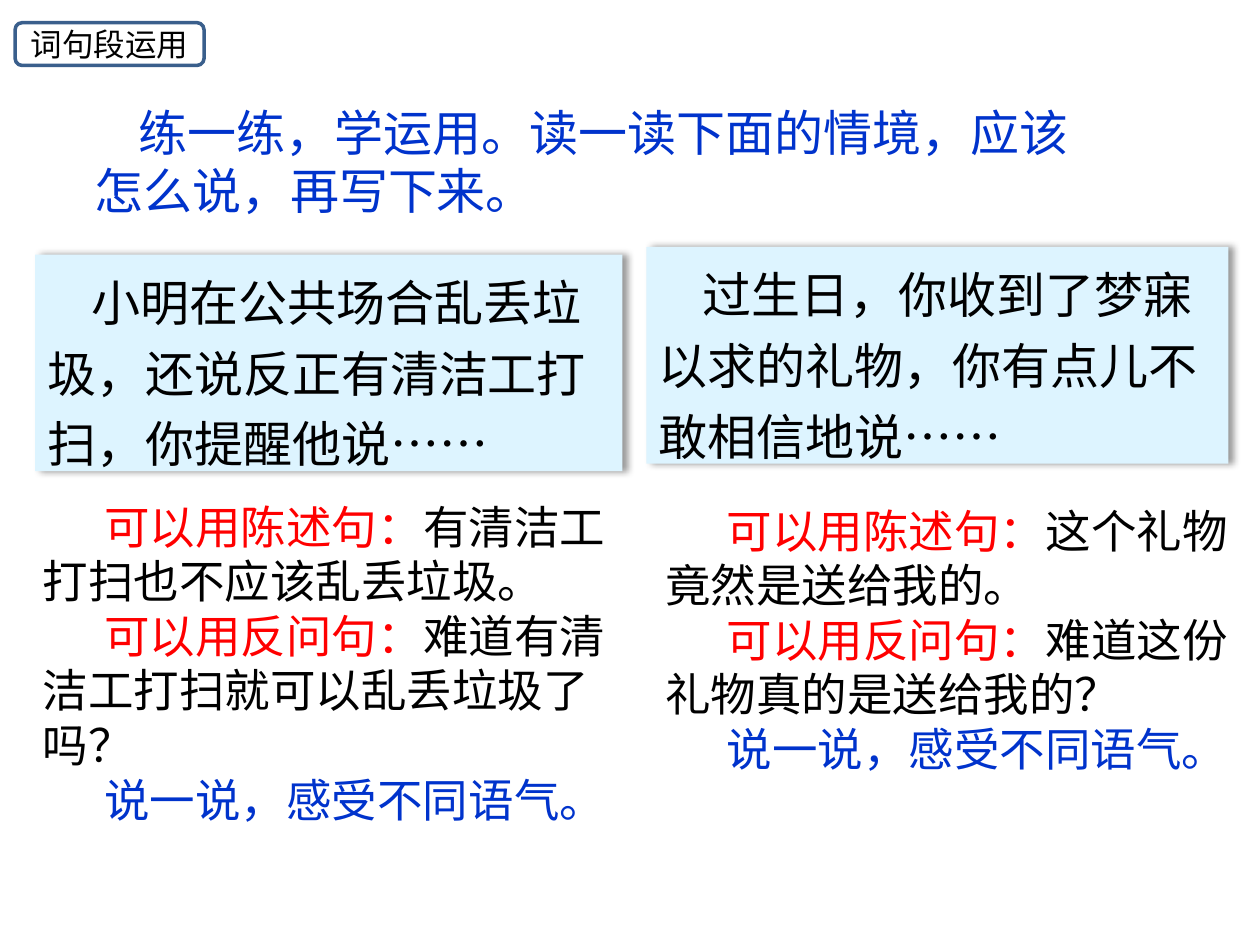
import pptx
import pptx.util
import pptx.dml.color
import pptx.enum.shapes
import pptx.enum.text
import pptx.oxml
import pptx.oxml.ns
from pptx.util import Inches

FONT = "Noto Sans CJK SC"
BLACK, RED, BLUE = "000000", "FF0000", "0033CC"
ALIGN = pptx.enum.text.PP_ALIGN
ANCHOR = pptx.enum.text.MSO_ANCHOR
SHAPE = pptx.enum.shapes.MSO_SHAPE


def tint(code):
    """Return the colour for a hex string."""
    return pptx.dml.color.RGBColor.from_string(code)


def add_run(para, text, size, code):
    """Add one run with its font, size and colour."""
    run = para.add_run()
    run.text = text
    run.font.size = pptx.util.Pt(size)
    run.font.name = FONT
    run.font.color.rgb = tint(code)
    face = pptx.oxml.parse_xml(
        f'<a:ea {pptx.oxml.ns.nsdecls("a")} typeface="{FONT}"/>')
    run.font._element.find(pptx.oxml.ns.qn("a:latin")).addnext(face)


def set_para(para, indent=0, align=ALIGN.LEFT):
    """Set the first-line indent and alignment of a paragraph."""
    para.alignment = align
    props = para._p.get_or_add_pPr()
    props.set("marL", "0")
    props.set("indent", str(Inches(indent)))


def set_frame(frame, anchor=ANCHOR.TOP):
    """Make a text frame wrap at a fixed size."""
    frame.word_wrap = True
    frame.auto_size = pptx.enum.text.MSO_AUTO_SIZE.NONE
    frame.vertical_anchor = anchor


def place(shape, box):
    """Move and size a shape to a box in inches."""
    shape.left, shape.top, shape.width, shape.height = map(Inches, box)


def add_panel(slide, kind, box, fill):
    """Add a filled shape with neither line nor shadow."""
    shape = slide.shapes.add_shape(kind, *map(Inches, box))
    shape.shadow.inherit = False
    shape.fill.solid()
    shape.fill.fore_color.rgb = tint(fill)
    shape.line.fill.background()
    return shape


def add_title(slide, box, text):
    """Format the title placeholder as the task prompt."""
    title = slide.shapes.title
    place(title, box)
    set_frame(title.text_frame)
    para = title.text_frame.paragraphs[0]
    set_para(para, 0.35)
    add_run(para, text, 28, BLUE)


def add_label(slide, box, text):
    """Add the rounded section label."""
    label = add_panel(slide, SHAPE.ROUNDED_RECTANGLE, box, "FFFFFF")
    label.line.color.rgb = tint("3A5F8C")
    label.line.width = pptx.util.Pt(2)
    set_frame(label.text_frame, ANCHOR.MIDDLE)
    para = label.text_frame.paragraphs[0]
    set_para(para, align=ALIGN.CENTER)
    add_run(para, text, 18, BLACK)


def add_scene(slide, box, text):
    """Add a shaded card that describes a situation."""
    card = add_panel(slide, SHAPE.RECTANGLE, box, "DDF4FF")
    blur, gap = pptx.util.Pt(4), pptx.util.Pt(3)
    shade = pptx.oxml.parse_xml(
        f'<a:outerShdw {pptx.oxml.ns.nsdecls("a")} blurRad="{blur}" '
        f'dist="{gap}" dir="0" algn="l" rotWithShape="0">'
        '<a:srgbClr val="000000"><a:alpha val="40000"/></a:srgbClr>'
        '</a:outerShdw>')
    card._element.spPr.find(pptx.oxml.ns.qn("a:effectLst")).append(shade)
    set_frame(card.text_frame)
    para = card.text_frame.paragraphs[0]
    set_para(para, 0.35)
    para.line_spacing = 1.2
    add_run(para, text, 28, BLACK)


def add_reply(slide, box, state, ask):
    """Add the two model answers and the closing hint."""
    frame = slide.shapes.add_textbox(*map(Inches, box)).text_frame
    set_frame(frame)
    lines = [
        [("可以用陈述句：", RED), (state, BLACK)],
        [("可以用反问句：", RED), (ask, BLACK)],
        [("说一说，感受不同语气。", BLUE)],
    ]
    for row, parts in enumerate(lines):
        para = frame.add_paragraph() if row else frame.paragraphs[0]
        set_para(para, 0.49)
        for text, code in parts:
            add_run(para, text, 26, code)


def main():
    """Build and save the slide."""
    deck = pptx.Presentation()
    deck.slide_width, deck.slide_height = Inches(10), Inches(7.5)
    slide = deck.slides.add_slide(deck.slide_layouts.get_by_name("Title Only"))
    add_title(slide, (0.65, 0.76, 8.19, 1.04),
              "练一练，学运用。读一读下面的情境，应该怎么说，再写下来。")
    add_label(slide, (0.12, 0.18, 1.5, 0.34), "词句段运用")
    add_scene(slide, (0.28, 2.02, 4.66, 1.72),
              "小明在公共场合乱丢垃圾，还说反正有清洁工打扫，你提醒他说……")
    add_scene(slide, (5.13, 1.96, 4.62, 1.72),
              "过生日，你收到了梦寐以求的礼物，你有点儿不敢相信地说……")
    add_reply(slide, (0.24, 3.91, 4.7, 2.73),
              "有清洁工打扫也不应该乱丢垃圾。",
              "难道有清洁工打扫就可以乱丢垃圾了吗？")
    add_reply(slide, (5.18, 3.94, 4.7, 2.29),
              "这个礼物竟然是送给我的。",
              "难道这份礼物真的是送给我的？")
    deck.save("out.pptx")


if __name__ == "__main__":
    main()
